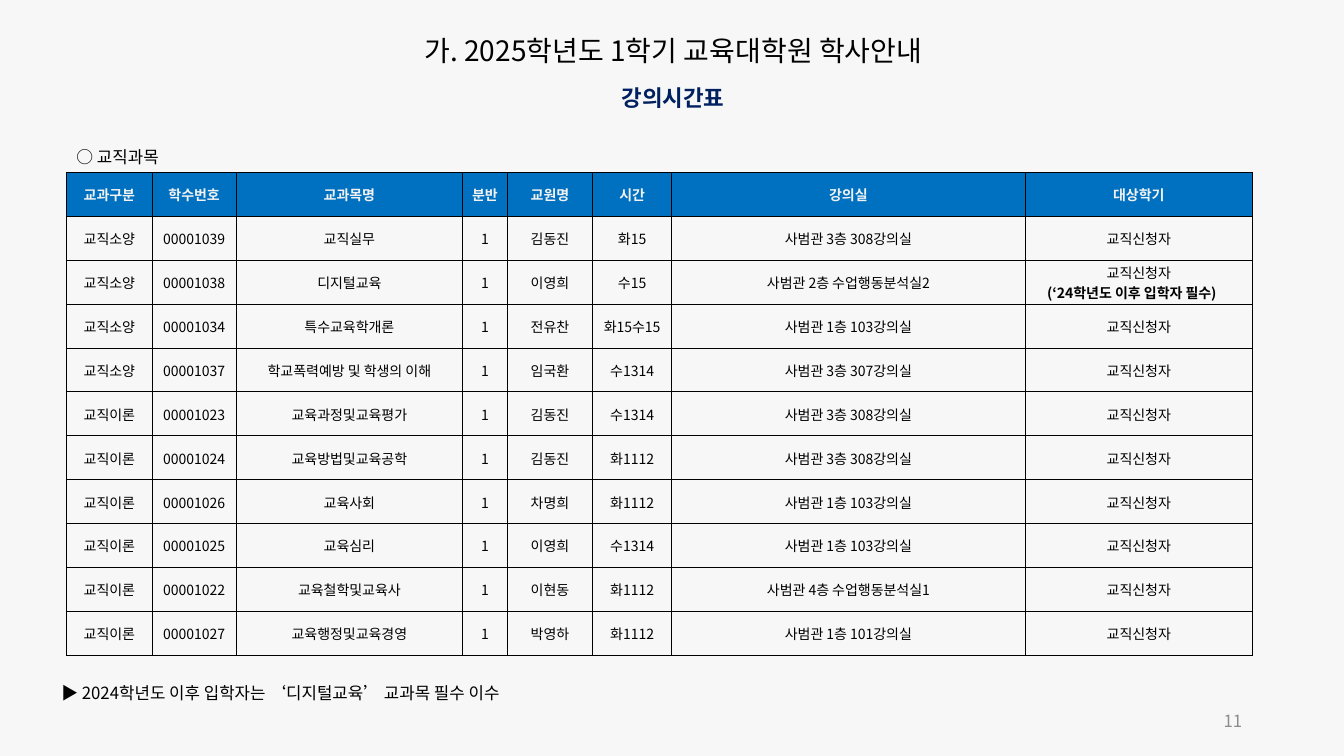
from lxml import etree
from pptx import Presentation
from pptx import util as u
from pptx.dml.color import RGBColor
from pptx.enum import text
from pptx.oxml import ns

FONT = "Noto Sans CJK KR"
BACKGROUND = RGBColor(0xF7, 0xF7, 0xF7)
BLACK = RGBColor(0, 0, 0)
NAVY = RGBColor(0x00, 0x20, 0x60)
GRAY = RGBColor(0x8C, 0x8C, 0x8C)
HEADER_FILL = RGBColor(0x00, 0x70, 0xC0)
HEADER_TEXT = RGBColor(0xF2, 0xF2, 0xF2)
LEFT, CENTER, RIGHT = text.PP_ALIGN.LEFT, text.PP_ALIGN.CENTER, text.PP_ALIGN.RIGHT
TOP, MIDDLE = text.MSO_ANCHOR.TOP, text.MSO_ANCHOR.MIDDLE

COLUMN_WIDTHS = [0.85, 0.83, 2.25, 0.44, 0.85, 0.78, 3.51, 2.25]
TABLE_HEIGHT = 4.79
HEADERS = ["교과구분", "학수번호", "교과목명", "분반", "교원명", "시간", "강의실", "대상학기"]
SECTION = "1"
TARGET = "교직신청자"
REQUIRED_NOTE = "(‘24학년도 이후 입학자 필수)\u3000"
REQUIRED_COURSE = "디지털교육"
COURSES = [
    ("교직소양", "00001039", "교직실무", "김동진", "화15", "사범관 3층 308강의실"),
    ("교직소양", "00001038", REQUIRED_COURSE, "이영희", "수15", "사범관 2층 수업행동분석실2"),
    ("교직소양", "00001034", "특수교육학개론", "전유찬", "화15수15", "사범관 1층 103강의실"),
    ("교직소양", "00001037", "학교폭력예방 및 학생의 이해", "임국환", "수1314", "사범관 3층 307강의실"),
    ("교직이론", "00001023", "교육과정및교육평가", "김동진", "수1314", "사범관 3층 308강의실"),
    ("교직이론", "00001024", "교육방법및교육공학", "김동진", "화1112", "사범관 3층 308강의실"),
    ("교직이론", "00001026", "교육사회", "차명희", "화1112", "사범관 1층 103강의실"),
    ("교직이론", "00001025", "교육심리", "이영희", "수1314", "사범관 1층 103강의실"),
    ("교직이론", "00001022", "교육철학및교육사", "이현동", "화1112", "사범관 4층 수업행동분석실1"),
    ("교직이론", "00001027", "교육행정및교육경영", "박영하", "화1112", "사범관 1층 101강의실"),
]


def format_paragraph(paragraph, size, color, bold=False, align=CENTER):
    """Set alignment and the Latin and East Asian fonts of a paragraph."""
    paragraph.alignment = align
    font = paragraph.font
    font.name, font.size, font.bold = FONT, u.Pt(size), bold
    font.color.rgb = color
    properties = paragraph._p.pPr.find(ns.qn("a:defRPr"))
    etree.SubElement(properties, ns.qn("a:ea"), typeface=FONT)


def fill_text(shape, box, content, size, color, bold=False, align=CENTER, anchor=TOP):
    """Place a text shape and write one formatted paragraph in it."""
    shape.left, shape.top, shape.width, shape.height = map(u.Inches, box)
    frame = shape.text_frame
    frame.word_wrap = True
    frame.auto_size = text.MSO_AUTO_SIZE.NONE
    frame.vertical_anchor = anchor
    frame.text = content
    format_paragraph(frame.paragraphs[0], size, color, bold, align)
    return frame


def add_label(slide, box, content, size, color, **style):
    """Add a text box with one line of text."""
    shape = slide.shapes.add_textbox(0, 0, 0, 0)
    return fill_text(shape, box, content, size, color, **style)


def add_borders(cell):
    """Draw a thin black line on all four sides of a cell."""
    properties = cell._tc.get_or_add_tcPr()
    for index, side in enumerate(("lnL", "lnR", "lnT", "lnB")):
        line = etree.Element(ns.qn(f"a:{side}"), w=str(u.Pt(0.5)))
        fill = etree.SubElement(line, ns.qn("a:solidFill"))
        etree.SubElement(fill, ns.qn("a:srgbClr"), val=str(BLACK))
        properties.insert(index, line)


def fill_cell(cell, content, is_header):
    """Write and format one timetable cell."""
    cell.vertical_anchor = MIDDLE
    cell.margin_left = cell.margin_right = cell.margin_top = u.Inches(0.01)
    cell.margin_bottom = 0
    if is_header:
        cell.fill.solid()
        cell.fill.fore_color.rgb = HEADER_FILL
    else:
        cell.fill.background()
    add_borders(cell)
    cell.text_frame.text = content
    for paragraph in cell.text_frame.paragraphs:
        bold = is_header or paragraph.text == REQUIRED_NOTE
        format_paragraph(paragraph, 10, HEADER_TEXT if is_header else BLACK, bold)


def course_row(kind, number, name, teacher, time, room):
    """Return the eight cell texts of one course."""
    target = f"{TARGET}\n{REQUIRED_NOTE}" if name == REQUIRED_COURSE else TARGET
    return [kind, number, name, SECTION, teacher, time, room, target]


def add_timetable(slide):
    """Add the course table with its header row."""
    rows = [HEADERS] + [course_row(*course) for course in COURSES]
    table = slide.shapes.add_table(
        len(rows), len(HEADERS), u.Inches(0.66), u.Inches(1.71),
        u.Inches(sum(COLUMN_WIDTHS)), u.Inches(TABLE_HEIGHT)).table
    table.horz_banding = False
    for column, width in zip(table.columns, COLUMN_WIDTHS):
        column.width = u.Inches(width)
    for row_index, row in enumerate(rows):
        for column_index, content in enumerate(row):
            fill_cell(table.cell(row_index, column_index), content, row_index == 0)


def main():
    """Build and save the timetable slide."""
    presentation = Presentation()
    presentation.slide_width, presentation.slide_height = u.Inches(13.33), u.Inches(7.5)
    slide = presentation.slides.add_slide(presentation.slide_layouts[5])
    slide.background.fill.solid()
    slide.background.fill.fore_color.rgb = BACKGROUND
    fill_text(slide.shapes.title, (3.77, 0.28, 5.82, 0.44),
              "가. 2025학년도 1학기 교육대학원 학사안내", 20, BLACK)
    add_label(slide, (3.99, 0.79, 5.37, 0.37), "강의시간표", 16, NAVY, bold=True)
    subject = add_label(slide, (0.66, 1.32, 11.84, 0.39), "○ 교직과목", 12, BLACK, align=LEFT)
    subject.margin_top = u.Inches(0.04)
    subject.paragraphs[0].line_spacing = 1.5
    add_timetable(slide)
    add_label(slide, (0.51, 6.72, 11.64, 0.3),
              "▶ 2024학년도 이후 입학자는 ‘디지털교육’ 교과목 필수 이수", 12, BLACK, align=LEFT)
    add_label(slide, (9.42, 6.95, 3, 0.4), "11", 12, GRAY, align=RIGHT, anchor=MIDDLE)
    presentation.save("out.pptx")


if __name__ == "__main__":
    main()
